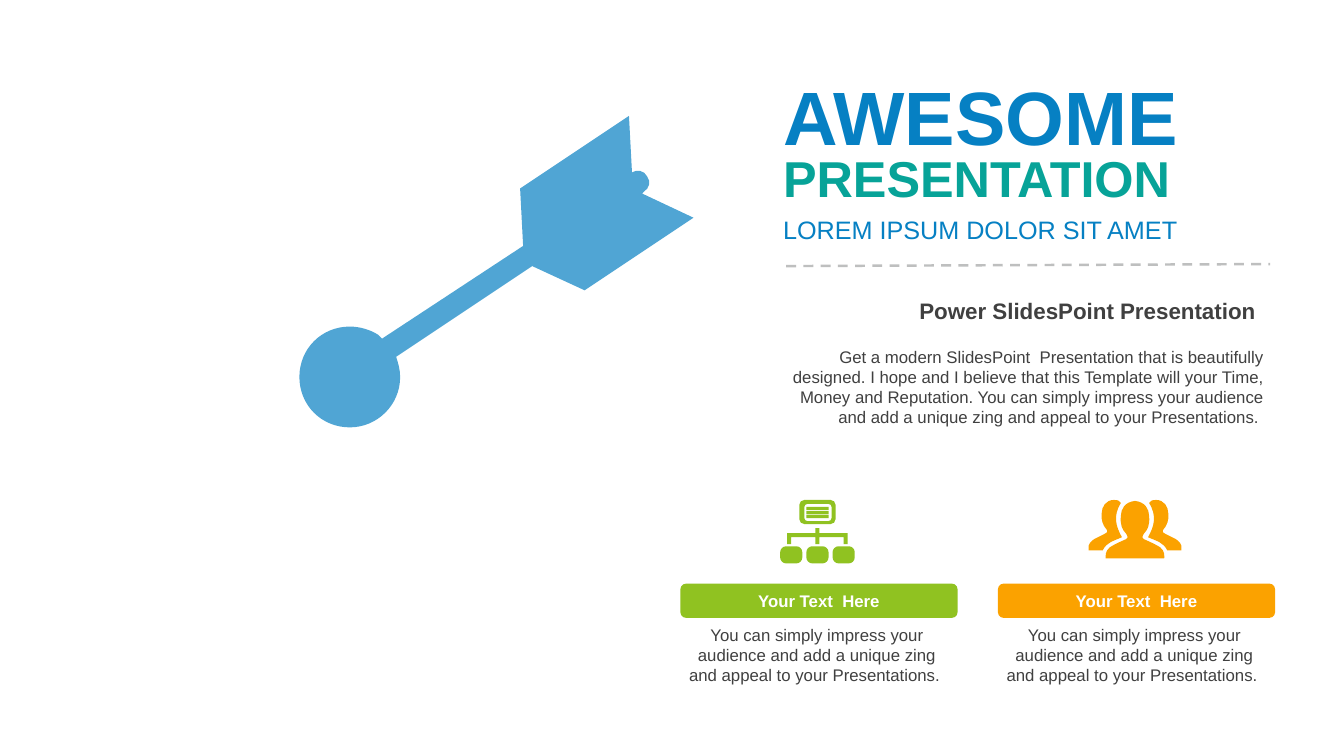
from lxml.etree import SubElement
from pptx import Presentation
from pptx.dml.color import RGBColor
from pptx.enum.dml import MSO_LINE
from pptx.enum.shapes import MSO_CONNECTOR, MSO_SHAPE
from pptx.enum.text import MSO_ANCHOR, MSO_AUTO_SIZE, PP_ALIGN
from pptx.oxml.ns import qn
from pptx.util import Inches, Pt

BLUE = RGBColor(0x06, 0x80, 0xC3)
TEAL = RGBColor(0x07, 0xA3, 0x98)
GREEN = RGBColor(0x90, 0xC2, 0x21)
ORANGE = RGBColor(0xFB, 0xA2, 0x00)
DARK = RGBColor(0x40, 0x40, 0x40)
GRAY = RGBColor(0xBE, 0xBF, 0xBF)
WHITE = RGBColor(0xFF, 0xFF, 0xFF)

TITLE = "AWESOME"
HEADS = [
    ("PRESENTATION", 1.4, 0.71, dict(size=36, color=TEAL, bold=True)),
    ("LOREM IPSUM DOLOR SIT AMET ", 2.08, 0.4, dict(size=18, color=BLUE)),
]
LEAD = "Power SlidesPoint Presentation "
BODY = ("Get a modern SlidesPoint  Presentation that is beautifully designed. "
        "I hope and I believe that this Template will your Time, Money and "
        "Reputation. You can simply impress your audience and add a unique "
        "zing and appeal to your Presentations. ")
LABEL = "Your Text  Here"
NOTE = ("You can simply impress your audience and add a unique zing "
        "and appeal to your Presentations.  ")
CARDS = [(6.75, GREEN), (9.9, ORANGE)]

ARROW = [
    (6.24, 1.15), (6.27, 1.71), (6.32, 1.68, 6.39, 1.69, 6.42, 1.75),
    (6.46, 1.8, 6.44, 1.87, 6.39, 1.9), (6.37, 1.92), (6.88, 2.16),
    (5.8, 2.88), (5.28, 2.64), (3.93, 3.54),
    (3.95, 3.6, 3.97, 3.67, 3.97, 3.74), (3.97, 4.02, 3.74, 4.24, 3.47, 4.24),
    (3.19, 4.24, 2.97, 4.02, 2.97, 3.74), (2.97, 3.46, 3.19, 3.24, 3.47, 3.24),
    (3.57, 3.24, 3.67, 3.27, 3.75, 3.32), (3.79, 3.36), (5.19, 2.44),
    (5.16, 1.87),
]
AXIS = 11.26
FRONT = [
    (11.26, 5.54), (10.97, 5.54), (10.97, 5.52, 10.96, 5.47, 11.01, 5.43),
    (11.04, 5.41, 11.1, 5.38, 11.17, 5.35), (11.2, 5.34, 11.18, 5.3, 11.16, 5.28),
    (11.14, 5.26, 11.11, 5.21, 11.12, 5.12), (11.12, 5.05, 11.16, 4.98, 11.26, 4.97),
]
SIDE = [
    (11.05, 4.96), (11.1, 4.96, 11.1, 4.97, 11.12, 4.99),
    (11.04, 5.12, 11.07, 5.22, 11.13, 5.33), (11.04, 5.37, 10.98, 5.38, 10.94, 5.46),
    (10.8, 5.46), (10.8, 5.42, 10.79, 5.4, 10.84, 5.36),
    (10.86, 5.34, 10.92, 5.32, 10.97, 5.29), (11, 5.28, 10.98, 5.25, 10.96, 5.23),
    (10.95, 5.21, 10.92, 5.17, 10.93, 5.09), (10.93, 5.03, 10.97, 4.96, 11.05, 4.96),
]
TREE = [
    (8.09, 5.24), (8.13, 5.24), (8.13, 5.29), (8.41, 5.29), (8.41, 5.4),
    (8.37, 5.4), (8.37, 5.33), (8.13, 5.33), (8.13, 5.4), (8.09, 5.4),
    (8.09, 5.33), (7.85, 5.33), (7.85, 5.4), (7.81, 5.4), (7.81, 5.29), (8.09, 5.29),
]


def pairs(part):
    """Split a part into its points."""
    return list(zip(part[::2], part[1::2]))


def flip(loop):
    """Mirror a loop about the middle of the people icon."""
    return [tuple(n if i % 2 else 2 * AXIS - n for i, n in enumerate(part))
            for part in loop]


def back(loop):
    """List the parts that retrace a loop from its end to its start."""
    out = []
    for last, part in zip(loop[-2::-1], loop[:0:-1]):
        pts = pairs(part)[-2::-1] + [last[-2:]]
        out.append(tuple(n for pt in pts for n in pt))
    return out


def block(x, y, w, h, r=0):
    """Outline a box, rounded if it has a radius."""
    k, e, b = r * 0.45, x + w, y + h
    if not r:
        return [(x, y), (e, y), (e, b), (x, b)]
    return [
        (x + r, y), (e - r, y), (e - k, y, e, y + k, e, y + r),
        (e, b - r), (e, b - k, e - k, b, e - r, b),
        (x + r, b), (x + k, b, x, b - k, x, b - r),
        (x, y + r), (x, y + k, x + k, y, x + r, y)]


def draw(slide, loops, color):
    """Fill closed loops of lines and curves as one shape."""
    ends = [[tuple(map(Inches, part[-2:])) for part in loop] for loop in loops]
    pen = slide.shapes.build_freeform(*ends[0][0])
    pen.add_line_segments(ends[0][1:])
    for loop in ends[1:]:
        pen.move_to(*loop[0])
        pen.add_line_segments(loop[1:])
    shape = paint(pen.convert_to_shape(), color)
    route = shape.element.spPr.find(".//" + qn("a:path"))
    steps = [step for step in route if step.tag != qn("a:close")]
    parts = [part for loop in loops for part in loop]
    for step, part in zip(steps, parts):
        if len(part) == 6:
            curve = SubElement(route, qn("a:cubicBezTo"))
            for x, y in pairs(part):
                SubElement(curve, qn("a:pt"), x=str(Inches(x) - shape.left),
                           y=str(Inches(y) - shape.top))
            route.replace(step, curve)
    return shape


def paint(shape, color):
    """Give a shape a plain fill."""
    shape.shadow.inherit = False
    shape.fill.solid()
    shape.fill.fore_color.rgb = color
    shape.line.fill.background()
    return shape


def write(shape, text, size=12, color=DARK, bold=False,
          align=PP_ALIGN.CENTER, anchor=MSO_ANCHOR.MIDDLE, pad=0.1):
    """Put formatted text in a shape."""
    frame = shape.text_frame
    frame.word_wrap = True
    frame.auto_size = MSO_AUTO_SIZE.NONE
    frame.vertical_anchor = anchor
    frame.margin_left = frame.margin_right = Inches(pad)
    frame.margin_top = frame.margin_bottom = Inches(0.05)
    para = frame.paragraphs[0]
    para.alignment = align
    run = para.add_run()
    run.text = text
    font = run.font
    font.name, font.size, font.bold = "Arial", Pt(size), bold
    font.color.rgb = color


def box(slide, *place):
    """Add a text box placed in inches."""
    return slide.shapes.add_textbox(*map(Inches, place))


def main():
    """Build the slide."""
    deck = Presentation()
    deck.slide_width, deck.slide_height = Inches(40 / 3), Inches(7.5)
    slide = deck.slides.add_slide(deck.slide_layouts[5])
    left, wide = 7.67, 4.97

    title = slide.shapes.title
    title.left, title.top = Inches(left), Inches(0.64)
    title.width, title.height = Inches(wide), Inches(1.01)
    write(title, TITLE, size=54, color=BLUE, bold=True, align=PP_ALIGN.JUSTIFY)
    for text, top, high, style in HEADS:
        write(box(slide, left, top, wide, high), text, align=PP_ALIGN.JUSTIFY, **style)
    write(box(slide, left, 2.9, wide, 0.37), LEAD, size=16, bold=True,
          align=PP_ALIGN.RIGHT, anchor=MSO_ANCHOR.TOP, pad=0.12)
    write(box(slide, left, 3.39, wide, 0.91), BODY,
          align=PP_ALIGN.RIGHT, anchor=MSO_ANCHOR.TOP)

    rule = slide.shapes.add_connector(
        MSO_CONNECTOR.STRAIGHT, Inches(7.8), Inches(2.64), Inches(12.6), Inches(2.62))
    rule.line.color.rgb = GRAY
    rule.line.width = Pt(1.75)
    rule.line.dash_style = MSO_LINE.DASH
    SubElement(rule.element.spPr, qn("a:effectLst"))

    arrow = draw(slide, [ARROW], BLUE)
    tint = arrow.element.spPr.find(".//" + qn("a:srgbClr"))
    SubElement(tint, qn("a:alpha")).set("val", "70000")

    for x, color in CARDS:
        write(box(slide, x - 0.02, 6.15, 2.75, 0.71), NOTE, anchor=MSO_ANCHOR.TOP)
        bar = slide.shapes.add_shape(
            MSO_SHAPE.ROUNDED_RECTANGLE, *map(Inches, (x, 5.79, 2.75, 0.34)))
        write(paint(bar, color), LABEL, color=WHITE, bold=True)

    draw(slide, [FRONT + back(flip(FRONT)), SIDE, flip(SIDE)], ORANGE)
    nodes = [block(7.74 + 0.26 * i, 5.42, 0.22, 0.17, 0.06) for i in range(3)]
    lines = [block(8, 5.03 + 0.04 * i, 0.22, 0.03) for i in range(3)]
    screen = [block(7.93, 4.96, 0.36, 0.24, 0.05), block(7.98, 5, 0.27, 0.17, 0.03)]
    draw(slide, nodes + [TREE] + screen + lines, GREEN)

    deck.save("out.pptx")


if __name__ == "__main__":
    main()
